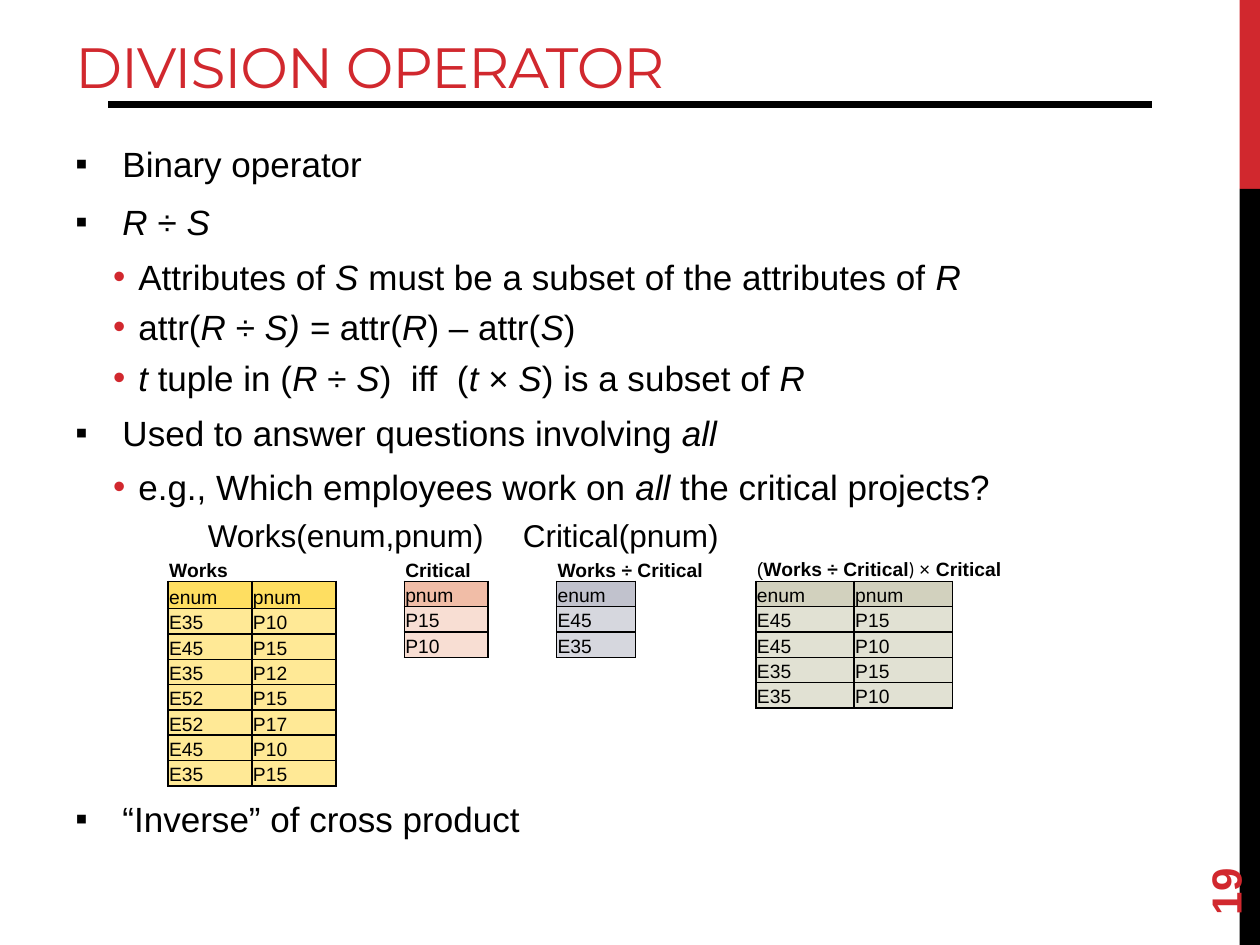
from pptx import Presentation
from pptx.dml.color import RGBColor
from pptx.enum.shapes import MSO_CONNECTOR, MSO_SHAPE
from pptx.enum.text import MSO_ANCHOR
from pptx.oxml.ns import qn
from pptx.util import Cm, Pt
from lxml import etree

RECT = MSO_SHAPE.RECTANGLE
STRAIGHT = MSO_CONNECTOR.STRAIGHT
TOP, MIDDLE, BOTTOM = MSO_ANCHOR.TOP, MSO_ANCHOR.MIDDLE, MSO_ANCHOR.BOTTOM

RED = RGBColor(0xD1, 0x28, 0x2E)
BLACK = RGBColor(0, 0, 0)
WHITE = RGBColor(0xFF, 0xFF, 0xFF)
GOLD, PALE_GOLD = RGBColor(0xFE, 0xDE, 0x61), RGBColor(0xFF, 0xE9, 0x96)
SALMON, PALE_SALMON = RGBColor(0xF1, 0xBD, 0xA7), RGBColor(0xF8, 0xDE, 0xD3)
GREY, PALE_GREY = RGBColor(0xC1, 0xC2, 0xCD), RGBColor(0xD6, 0xD7, 0xDE)
OLIVE, PALE_OLIVE = RGBColor(0xD2, 0xD1, 0xBE), RGBColor(0xE1, 0xE1, 0xD3)

# level: (left margin cm, indent cm, spacing pt, bullet, bullet colour, size pt)
LEVELS = [
    (0.95, -0.95, 4.8, "▪", BLACK, 20),
    (1.27, -0.51, 2.4, "•", RED, 20),
    (2.67, 0, 2.4, None, None, 18),
]
# The same stop, counted from the indent and from the edge of the text:
# programs differ in which they use.
TAB_STOPS = (7.62, 10.29)
TABLE_GAP = 136.8  # points above the last bullet, leaving room for the tables

BODY = [
    (0, "Binary operator"),
    (0, "*R *÷ *S*"),
    (1, "Attributes of *S* must be a subset of the attributes of *R*"),
    (1, "attr(*R *÷ *S) = *attr(*R*) – attr(*S*)"),
    (1, "*t* tuple in (*R *÷ *S*)  iff  (*t *× *S*) is a subset of *R*"),
    (0, "Used to answer questions involving *all*"),
    (1, "e.g., Which employees work on *all* the critical projects?"),
    (2, "Works(enum,pnum)\tCritical(pnum)"),
    (0, "“Inverse” of cross product"),
]

# left cm, column width cm, columns spanned by the caption, caption, rows, fills
TABLES = [
    (3.39, 1.69, 2, "*Works*",
     ["enum pnum", "E35 P10", "E45 P15", "E35 P12", "E52 P15", "E52 P17",
      "E45 P10", "E35 P15"], GOLD, PALE_GOLD),
    (8.15, 1.69, 1, "*Critical*", ["pnum", "P15", "P10"], SALMON, PALE_SALMON),
    (11.22, 1.59, 2, "*Works ÷ Critical*", ["enum", "E45", "E35"],
     GREY, PALE_GREY),
    (15.24, 1.98, 3, "(*Works ÷ Critical*) **× *Critical*",
     ["enum pnum", "E45 P15", "E45 P10", "E35 P15", "E35 P10"],
     OLIVE, PALE_OLIVE),
]


class Deck:
    def __init__(self, font="Arial"):
        self.font = font
        self.prs = Presentation()
        self.prs.slide_width, self.prs.slide_height = Cm(25.4), Cm(19.05)
        self.s = self.prs.slides.add_slide(self.prs.slide_layouts[6])

    def runs(self, p, markup, size, color=BLACK, emphasis="italic", font=None):
        """Add runs; the parts between asterisks get the emphasis."""
        for i, text in enumerate(markup.split("*")):
            if text:
                r = p.add_run()
                r.text = text
                r.font.name = font or self.font
                r.font.size = Pt(size)
                r.font.color.rgb = color
                r.font.bold = r.font.italic = False
                setattr(r.font, emphasis, i % 2 == 1)

    def bar(self, x, y, w, h, color):
        sp = self.s.shapes.add_shape(RECT, Cm(x), Cm(y), Cm(w), Cm(h))
        sp.shadow.inherit = False
        sp.fill.solid()
        sp.fill.fore_color.rgb = color
        sp.line.fill.background()

    def rule(self, x1, x2, y, width):
        line = self.s.shapes.add_connector(STRAIGHT, Cm(x1), Cm(y), Cm(x2), Cm(y))
        line.line.color.rgb = BLACK
        line.line.width = Pt(width)
        etree.SubElement(line._element.spPr, qn("a:effectLst"))

    def box(self, x, y, w, h, anchor=TOP):
        sp = self.s.shapes.add_textbox(Cm(x), Cm(y), Cm(w), Cm(h))
        sp.text_frame.word_wrap = True
        sp.text_frame.vertical_anchor = anchor
        return sp

    def title(self, text):
        p = self.box(1.27, 0.43, 23.7, 1.7, BOTTOM).text_frame.paragraphs[0]
        self.runs(p, text, 32.4, RED, font="Montserrat")
        p.runs[0].font._element.set("spc", "-60")

    def number(self, text):
        sp = self.box(22.86, 16.36, 3.66, 1.02, MIDDLE)
        sp.rotation = 270
        self.runs(sp.text_frame.paragraphs[0], f"*{text}*", 24, RED, "bold")

    def body(self, items):
        tf = self.box(1.27, 2.74, 22.86, 14.27).text_frame
        for i, (level, markup) in enumerate(items):
            p = tf.add_paragraph() if i else tf.paragraphs[0]
            margin, indent, gap, bullet, color, size = LEVELS[level]
            p.level = level
            p.space_before = p.space_after = Pt(gap)
            pPr = p._p.get_or_add_pPr()
            pPr.set("marL", str(Cm(margin)))
            pPr.set("indent", str(Cm(indent)))
            if bullet:
                clr = etree.SubElement(pPr, qn("a:buClr"))
                etree.SubElement(clr, qn("a:srgbClr"), val=str(color))
                etree.SubElement(pPr, qn("a:buFont"), typeface=self.font)
                etree.SubElement(pPr, qn("a:buChar"), char=bullet)
            if "\t" in markup:
                tabs = etree.SubElement(pPr, qn("a:tabLst"))
                for stop in TAB_STOPS:
                    etree.SubElement(tabs, qn("a:tab"), pos=str(Cm(stop)), algn="l")
            self.runs(p, markup, size)
        p.space_before = Pt(TABLE_GAP)

    def borders(self, cell, **colors):
        """Draw the sides named L, R, T, B; the others get no line."""
        tcPr = cell._tc.get_or_add_tcPr()
        for side in "LRTB":
            ln = etree.SubElement(tcPr, qn(f"a:ln{side}"), w=str(Pt(1)))
            if side in colors:
                fill = etree.SubElement(ln, qn("a:solidFill"))
                etree.SubElement(fill, qn("a:srgbClr"), val=str(colors[side]))
            else:
                etree.SubElement(ln, qn("a:noFill"))

    def table(self, x, col_w, cols, caption, rows, head, pale, y=11.21, row_h=0.51):
        n = len(rows) + 1
        tbl = self.s.shapes.add_table(n, cols, Cm(x), Cm(y), Cm(col_w * cols),
                                      Cm(row_h * n)).table
        tbl.first_row = tbl.horz_banding = False
        for col in tbl.columns:
            col.width = Cm(col_w)
        grid = [[caption]] + [row.split() for row in rows]
        used = len(grid[1])
        for i, texts in enumerate(grid):
            tbl.rows[i].height = Cm(row_h)
            for j in range(cols):
                cell = tbl.cell(i, j)
                cell.vertical_anchor = BOTTOM
                cell.margin_left = cell.margin_right = cell.margin_top = Cm(0.02)
                cell.margin_bottom = 0
                p = cell.text_frame.paragraphs[0]
                if j < len(texts):
                    self.runs(p, texts[j], 11, emphasis="bold")
                else:
                    p._p.get_or_add_endParaRPr().set("sz", "1100")
                if i and j < used:
                    self.borders(cell, L=BLACK, R=BLACK, T=BLACK, B=BLACK)
                    cell.fill.solid()
                    cell.fill.fore_color.rgb = head if i == 1 else pale
                    continue
                if i:
                    self.borders(cell, L=BLACK)
                elif j < used:
                    self.borders(cell, L=WHITE, R=WHITE, T=WHITE, B=BLACK)
                else:
                    self.borders(cell, R=WHITE, T=WHITE)
                cell.fill.background()
        if cols > 1:
            tbl.cell(0, 0).merge(tbl.cell(0, cols - 1))
        return tbl


def main():
    deck = Deck()
    deck.bar(24.99, 0, 0.41, 3.81, RED)
    deck.bar(24.99, 3.81, 0.41, 15.24, BLACK)
    deck.rule(2.18, 23.22, 2.11, 4)
    deck.body(BODY)
    deck.title("DIVISION OPERATOR")
    deck.number("19")
    works, _, _, product = [deck.table(*spec) for spec in TABLES]
    works.rows[1].height = Cm(0.55)
    for r in product.cell(0, 0).text_frame.paragraphs[0].runs:
        if r.text.startswith(")"):
            r.font.name = "Calibri"
    deck.prs.save("out.pptx")


if __name__ == "__main__":
    main()
